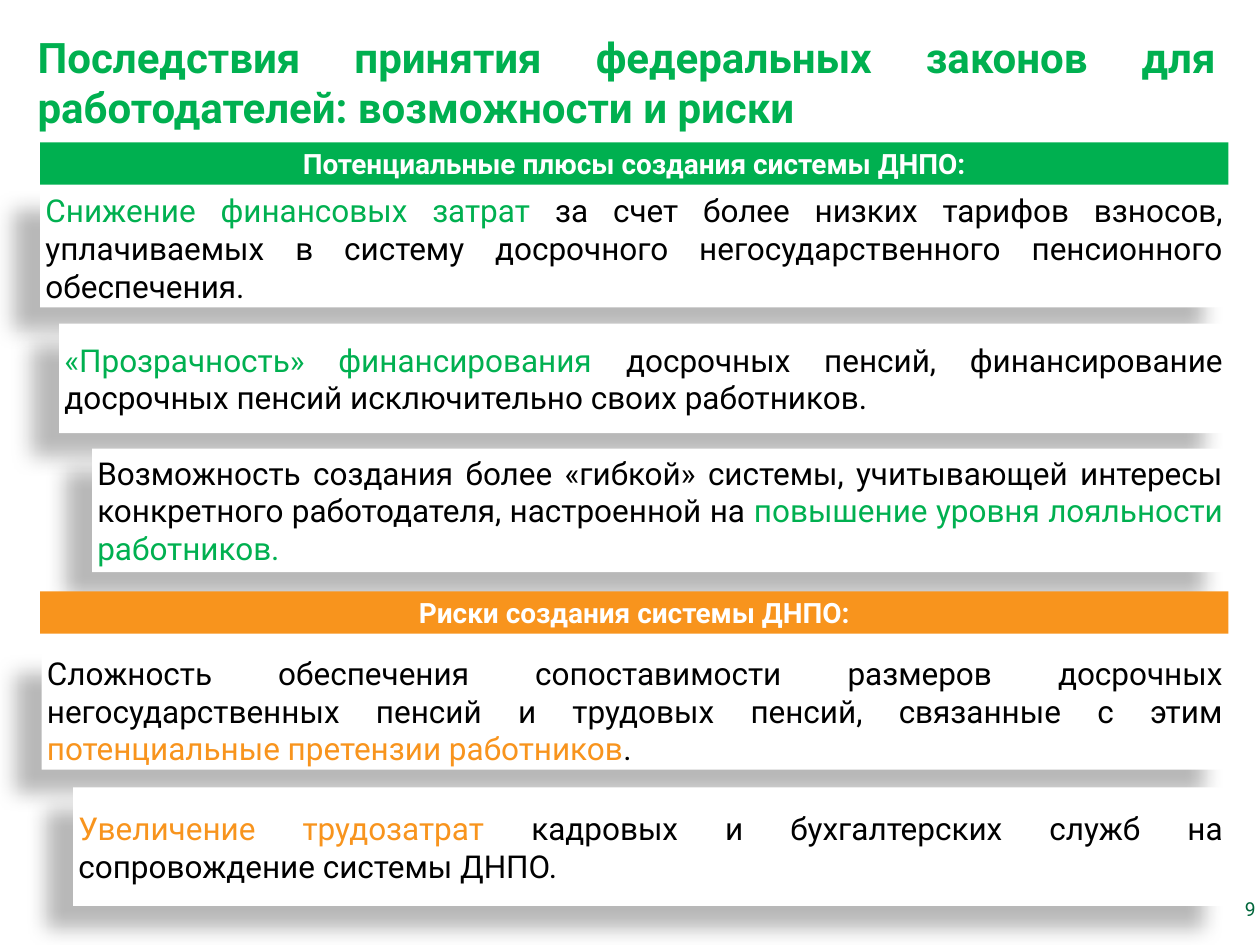
from dataclasses import dataclass

import lxml.etree
import pptx
import pptx.dml.color
import pptx.enum.shapes
import pptx.enum.text
import pptx.oxml.ns
import pptx.util
from pptx.util import Pt

ALIGN = pptx.enum.text.PP_ALIGN
ANCHOR = pptx.enum.text.MSO_ANCHOR


@dataclass(frozen=True)
class Theme:
    font: str = "Roboto"
    green: str = "00B050"
    orange: str = "F8941D"
    black: str = "000000"
    white: str = "FFFFFF"
    dark_green: str = "00663B"
    title: int = 24
    card: int = 18
    bar: int = 16
    number: int = 11


theme = Theme()
right_edge = 702


def write(shape, runs, size, align, bold=False):
    """Fill the shape's only paragraph with (text, colour) runs."""
    paragraph = shape.text_frame.paragraphs[0]
    paragraph.alignment = align
    for text, color in runs:
        run = paragraph.add_run()
        run.text = text
        run.font.name = theme.font
        run.font.size = Pt(size)
        run.font.bold = bold
        run.font.color.rgb = pptx.dml.color.RGBColor.from_string(color)


def add_box(left, top, height, color):
    """Add a plain rectangle reaching to the common right edge."""
    box = slide.shapes.add_shape(
        pptx.enum.shapes.MSO_SHAPE.RECTANGLE,
        Pt(left), Pt(top), Pt(right_edge - left), Pt(height))
    box.shadow.inherit = False
    box.fill.solid()
    box.fill.fore_color.rgb = pptx.dml.color.RGBColor.from_string(color)
    box.line.fill.background()
    box.text_frame.word_wrap = True
    box.text_frame.vertical_anchor = ANCHOR.MIDDLE
    return box


presentation = pptx.Presentation()
presentation.slide_width = Pt(720)
presentation.slide_height = Pt(540)
slide = presentation.slides.add_slide(presentation.slide_layouts[6])

title = slide.shapes.add_textbox(Pt(14.4), Pt(14.4), Pt(687.6), Pt(65.5))
title.text_frame.word_wrap = True
write(title, [("Последствия принятия федеральных законов для работодателей: "
               "возможности и риски", theme.green)],
      theme.title, ALIGN.JUSTIFY, bold=True)

# Benefits and risks: left, top, height, runs
cards = [
    (23, 107.3, 68.4, [
        ("Снижение финансовых затрат ", theme.green),
        ("за счет более низких тарифов взносов, уплачиваемых в систему "
         "досрочного негосударственного пенсионного обеспечения.", theme.black)]),
    (33.8, 185, 62.6, [
        ("«Прозрачность» финансирования ", theme.green),
        ("досрочных пенсий, финансирование досрочных пенсий исключительно "
         "своих работников.", theme.black)]),
    (52.6, 256.3, 70.6, [
        ("Возможность создания более «гибкой» системы, учитывающей интересы "
         "конкретного работодателя, настроенной на ", theme.black),
        ("повышение уровня лояльности работников.", theme.green)]),
    (23.8, 372.2, 67.7, [
        ("Сложность обеспечения сопоставимости размеров досрочных "
         "негосударственных пенсий и трудовых пенсий, связанные с этим ", theme.black),
        ("потенциальные претензии работников", theme.orange),
        (".", theme.black)]),
    (41.8, 450, 67.7, [
        ("Увеличение трудозатрат ", theme.orange),
        ("кадровых и бухгалтерских служб на сопровождение системы ДНПО.",
         theme.black)]),
]
for left, top, height, runs in cards:
    card = add_box(left, top, height, theme.white)
    frame = card.text_frame
    frame.margin_left = frame.margin_right = Pt(3)
    frame.margin_top = frame.margin_bottom = Pt(3)
    write(card, runs, theme.card, ALIGN.JUSTIFY)

    effects = card.element.spPr.find(pptx.oxml.ns.qn("a:effectLst"))
    shadow = lxml.etree.SubElement(
        effects, pptx.oxml.ns.qn("a:outerShdw"),
        blurRad=str(Pt(11.8)), dist=str(Pt(19.7)), dir=str(141 * 60000),
        algn="ctr", rotWithShape="0")
    shade = lxml.etree.SubElement(
        shadow, pptx.oxml.ns.qn("a:srgbClr"), val=theme.black)
    lxml.etree.SubElement(shade, pptx.oxml.ns.qn("a:alpha"), val="28000")

for top, heading, color in [
    (81.4, "Потенциальные плюсы создания системы ДНПО:", theme.green),
    (337.9, "Риски создания системы ДНПО:", theme.orange),
]:
    bar = add_box(23, top, 24.2, color)
    write(bar, [(heading, theme.white)], theme.bar, ALIGN.CENTER, bold=True)

page_number = slide.shapes.add_textbox(Pt(711.4), Pt(511.9), Pt(6), Pt(28))
frame = page_number.text_frame
frame.margin_left = frame.margin_right = frame.margin_top = frame.margin_bottom = 0
frame.word_wrap = False
frame.paragraphs[0].line_spacing = Pt(14)
write(page_number, [("9", theme.dark_green)], theme.number, ALIGN.LEFT)

presentation.save("out.pptx")
